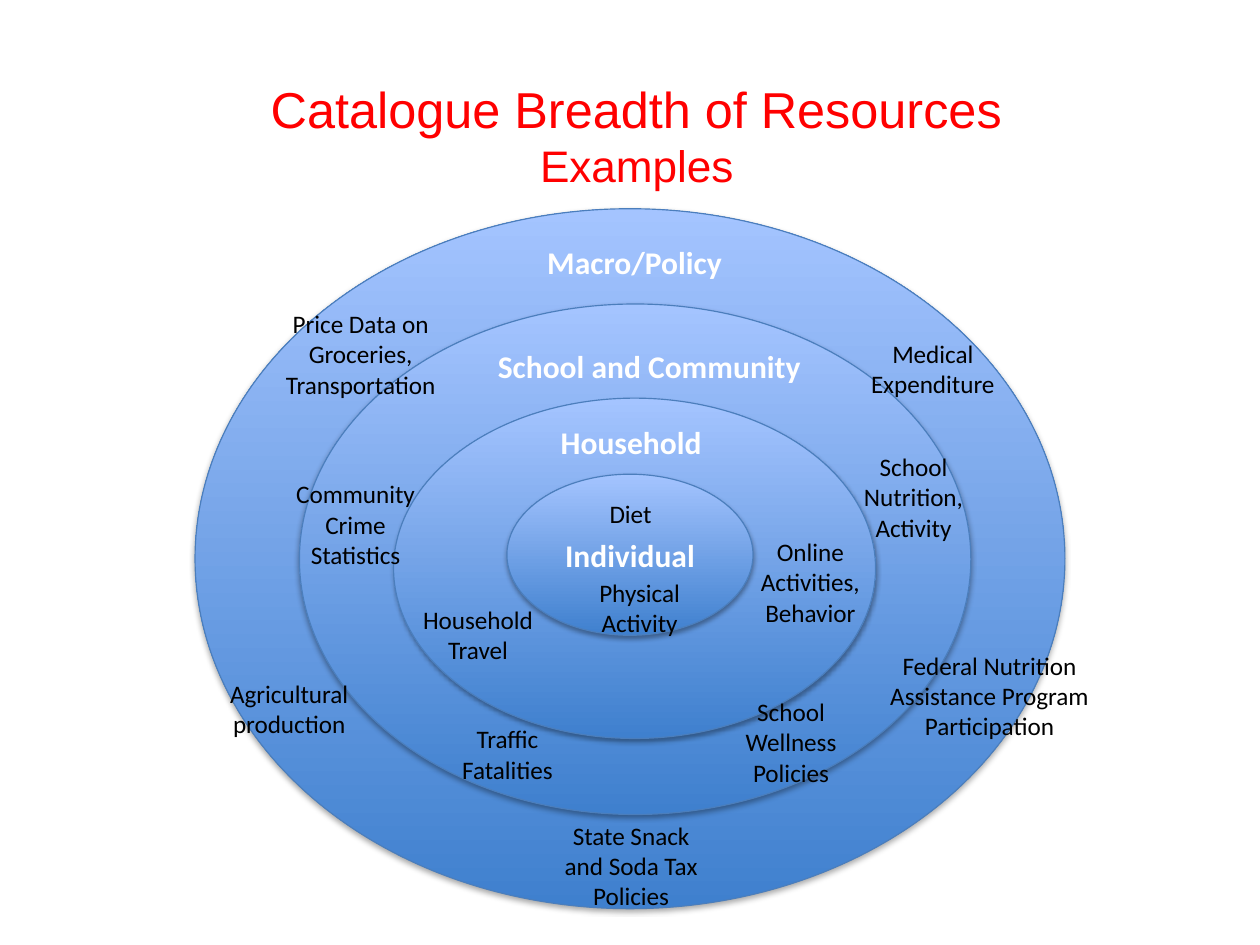
from lxml import etree
from pptx import Presentation
from pptx.dml.color import RGBColor
from pptx.enum.shapes import MSO_SHAPE
from pptx.enum.text import MSO_ANCHOR, MSO_AUTO_SIZE, PP_ALIGN
from pptx.oxml.ns import qn
from pptx.util import Inches, Pt

OVAL = MSO_SHAPE.OVAL
MIDDLE = MSO_ANCHOR.MIDDLE
GROW = MSO_AUTO_SIZE.SHAPE_TO_FIT_TEXT
CENTER = PP_ALIGN.CENTER

THEME = {
    "ring_bottom": RGBColor.from_string("3F80CE"),
    "ring_top": RGBColor.from_string("A4C4FF"),
    "ring_line": RGBColor.from_string("4B7EBC"),
    "shadow": "000000",
    "title": {"name": "Arial", "size": Pt(32), "color": "FF0000"},
    "subtitle": {"name": "Arial", "size": Pt(28), "color": "FF0000"},
    "level": {"name": "Calibri", "size": Pt(20), "bold": True, "color": "FFFFFF"},
    "example": {"name": "Calibri", "size": Pt(16), "color": "000000"},
}


def write(p, text, style):
    p.alignment = CENTER
    r = p.add_run()
    r.text = text
    for key, value in THEME[style].items():
        if key == "color":
            r.font.color.rgb = RGBColor.from_string(value)
        else:
            setattr(r.font, key, value)


def add_text(box, lines, wrap=True):
    tf = s.shapes.add_textbox(*map(Inches, box)).text_frame
    tf.word_wrap = wrap
    tf.auto_size = GROW
    for i, (text, style) in enumerate(lines):
        p = tf.add_paragraph() if i else tf.paragraphs[0]
        write(p, text, style)


prs = Presentation()
prs.slide_width, prs.slide_height = Inches(11.11), Inches(8.33)
s = prs.slides.add_slide(prs.slide_layouts[6])

rings = [
    (1.72, 1.84, 7.67, 6.17),
    (2.64, 2.68, 5.92, 4.5),
    (3.47, 3.51, 4.25, 3),
    (4.47, 4.18, 2.17, 1.42),
]
for box in rings:
    sp = s.shapes.add_shape(OVAL, *map(Inches, box))
    sp.fill.gradient()
    sp.fill.gradient_angle = 90
    bottom, top = sp.fill.gradient_stops
    bottom.color.rgb, top.color.rgb = THEME["ring_bottom"], THEME["ring_top"]
    sp.line.color.rgb = THEME["ring_line"]
    sp.line.width = Pt(0.75)
    sp.shadow.inherit = False
    effects = sp._element.spPr.find(qn("a:effectLst"))
    shadow = etree.SubElement(effects, qn("a:outerShdw"), blurRad=str(Pt(3.1)),
                              dist=str(Pt(1.8)), dir="5400000", rotWithShape="0")
    color = etree.SubElement(shadow, qn("a:srgbClr"), val=THEME["shadow"])
    etree.SubElement(color, qn("a:alpha"), val="35000")

individual = sp.text_frame
individual.vertical_anchor = MIDDLE
write(individual.paragraphs[0], "Individual", "level")

add_text((0.06, 0.64, 11.11, 1.11),
         [("Catalogue Breadth of Resources", "title"), ("Examples", "subtitle")])

levels = [
    ("Macro/Policy", 4.72, 2.09, 1.75),
    ("School and Community", 4.28, 3.01, 2.89),
    ("Household", 4.84, 3.68, 1.45),
]
for text, left, top, width in levels:
    add_text((left, top, width, 0.44), [(text, "level")], wrap=False)

examples = [
    ("Agricultural production", 1.56, 5.93, 1.98, 0.64),
    ("Price Data on Groceries, Transportation", 2.14, 2.67, 2.08, 0.91),
    ("School Wellness Policies", 6.22, 6.09, 1.51, 0.91),
    ("State Snack and Soda Tax Policies", 4.81, 7.18, 1.51, 0.91),
    ("Federal Nutrition Assistance Program Participation", 7.64, 5.68, 2.17, 0.91),
    ("Community Crime Statistics", 2.38, 4.17, 1.51, 0.91),
    ("Household Travel", 3.46, 5.28, 1.51, 0.64),
    ("Diet", 5.06, 4.34, 1, 0.37),
    ("Physical Activity", 5.14, 5.04, 1, 0.64),
    ("Medical Expenditure", 7.47, 2.93, 1.51, 0.64),
    ("School Nutrition, Activity", 7.3, 3.93, 1.51, 0.91),
    ("Traffic Fatalities", 3.72, 6.33, 1.51, 0.64),
    ("Online Activities, Behavior", 6.39, 4.68, 1.51, 0.91),
]
for text, *box in examples:
    add_text(box, [(text, "example")])

prs.save("out.pptx")
